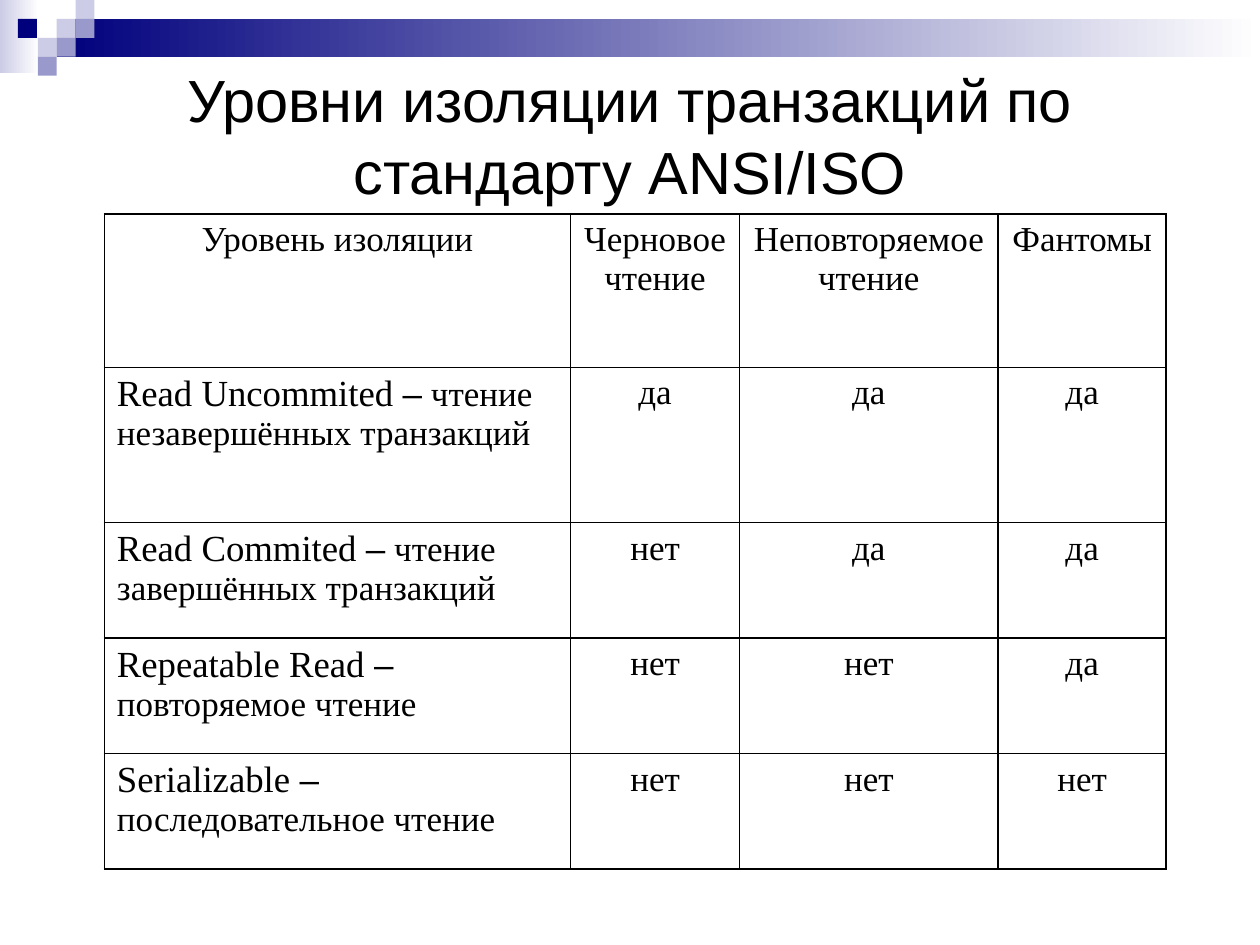
from lxml import etree
from pptx import Presentation
from pptx.dml.color import RGBColor
from pptx.enum.shapes import MSO_SHAPE
from pptx.enum.text import MSO_ANCHOR, PP_ALIGN
from pptx.oxml import parse_xml
from pptx.oxml.ns import nsdecls
from pptx.util import Pt

COLORS = {"navy": "00007D", "violet": "9999CC", "lilac": "CCCCE6",
          "white": "FFFFFF", "black": "000000"}
SERIF, SANS = "Times New Roman", "Arial"


def add_block(left, top, width, height, color, fade=False):
    shape = slide.shapes.add_shape(MSO_SHAPE.RECTANGLE, Pt(left), Pt(top), Pt(width), Pt(height))
    shape.shadow.inherit = False
    shape.line.fill.background()
    if fade:
        shape.fill.gradient()
        shape.fill.gradient_angle = 0
        for stop, name in zip(shape.fill.gradient_stops, (color, "white")):
            stop.color.rgb = RGBColor.from_string(COLORS[name])
    else:
        shape.fill.solid()
        shape.fill.fore_color.rgb = RGBColor.from_string(COLORS[color])


def add_run(paragraph, text, size, font_name):
    run = paragraph.add_run()
    run.text = text
    run.font.size = Pt(size)
    run.font.name = font_name
    run.font.color.rgb = RGBColor.from_string(COLORS["black"])


presentation = Presentation()
presentation.slide_width, presentation.slide_height = Pt(720), Pt(540)
slide = presentation.slides.add_slide(presentation.slide_layouts[5])

add_block(0, 0, 22.3, 42, "lilac", fade=True)
add_block(32.4, 10.8, 687.6, 21.6, "navy", fade=True)
square = 10.8
for column, row, color in [(3, 1, "lilac"), (4, 0, "lilac"), (4, 1, "violet"),
                           (2, 2, "lilac"), (0.95, 1, "navy"), (3, 2, "violet"),
                           (2, 3, "violet")]:
    add_block(column * square, row * square, square, square, color)

title = slide.shapes.title
title.left, title.top, title.width, title.height = Pt(36), Pt(42), Pt(648), Pt(70)
title.text_frame.vertical_anchor = MSO_ANCHOR.MIDDLE
title.text_frame.word_wrap = True
title_paragraph = title.text_frame.paragraphs[0]
title_paragraph.alignment = PP_ALIGN.CENTER
add_run(title_paragraph, "Уровни изоляции транзакций по стандарту ANSI/ISO", 34, SANS)

header = ["Уровень изоляции", "Черновое чтение", "Неповторяемое чтение", "Фантомы"]
levels = [
    ("Read Uncommited", "чтение незавершённых транзакций", ["да", "да", "да"]),
    ("Read Commited", "чтение завершённых транзакций", ["нет", "да", "да"]),
    ("Repeatable Read", "повторяемое чтение", ["нет", "нет", "да"]),
    ("Serializable", "последовательное чтение", ["нет", "нет", "нет"]),
]
column_widths = [266.5, 96.5, 147.8, 96]
row_heights = [87.5, 88.8, 66, 66, 66]
table = slide.shapes.add_table(len(row_heights), len(column_widths), Pt(59.6), Pt(122.4),
                               Pt(sum(column_widths)), Pt(sum(row_heights))).table
table.first_row = table.horz_banding = False
for column, width in zip(table.columns, column_widths):
    column.width = Pt(width)
for row, height in zip(table.rows, row_heights):
    row.height = Pt(height)

for index, text in enumerate(header):
    add_run(table.cell(0, index).text_frame.paragraphs[0], text, 20, SERIF)
for row_index, (level, meaning, answers) in enumerate(levels, start=1):
    paragraph = table.cell(row_index, 0).text_frame.paragraphs[0]
    add_run(paragraph, level + " ", 21, SERIF)
    add_run(paragraph, "–", 20, SANS)
    add_run(paragraph, " " + meaning, 20, SERIF)
    for column_index, answer in enumerate(answers, start=1):
        add_run(table.cell(row_index, column_index).text_frame.paragraphs[0], answer, 20, SERIF)

for row_index in range(len(row_heights)):
    for column_index in range(len(column_widths)):
        cell = table.cell(row_index, column_index)
        is_level = row_index > 0 and column_index == 0
        cell.text_frame.paragraphs[0].alignment = PP_ALIGN.LEFT if is_level else PP_ALIGN.CENTER
        cell.fill.background()
        properties = cell.fill._xPr
        for position, side in enumerate(("lnL", "lnR", "lnT", "lnB")):
            border = parse_xml(f'<a:{side} {nsdecls("a")} w="{Pt(1)}"><a:solidFill>'
                               f'<a:srgbClr val="{COLORS["black"]}"/></a:solidFill></a:{side}>')
            properties.insert(position, border)

presentation.save("out.pptx")
